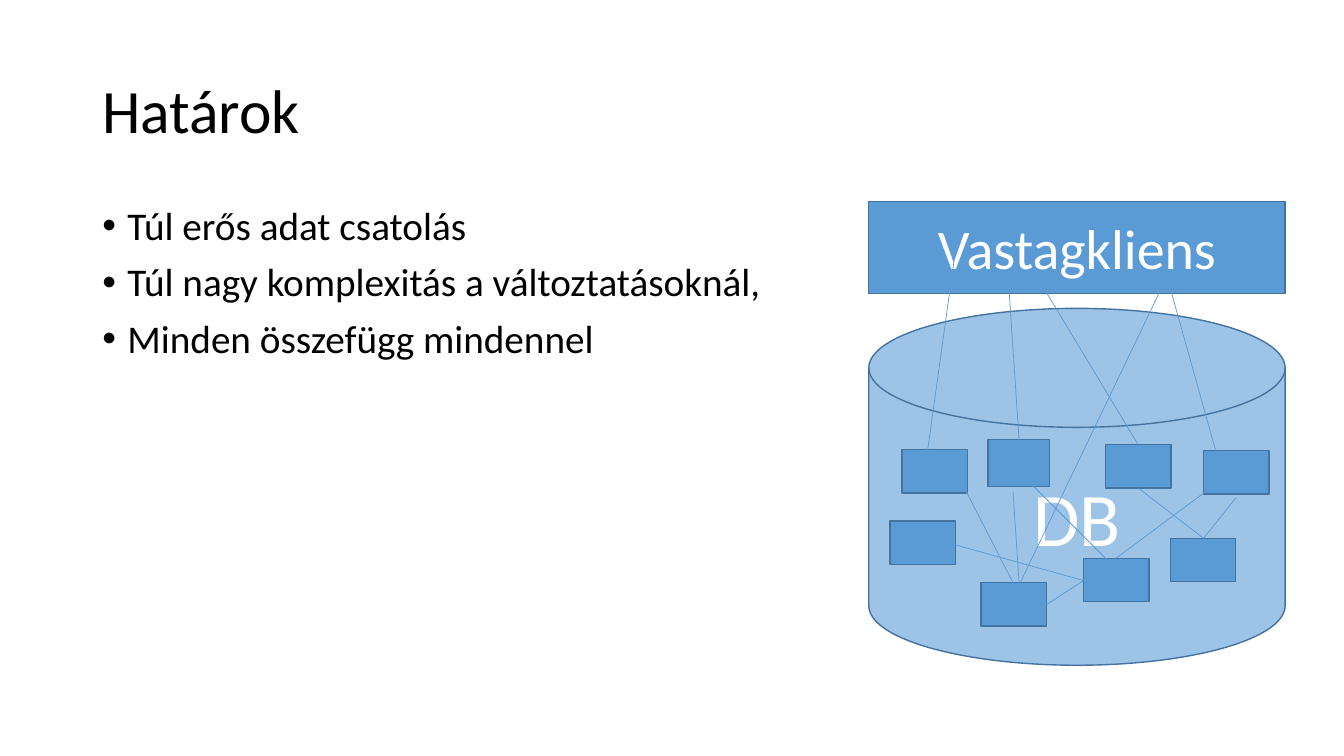
"""Build the slide on the limits of a thick client over a shared database."""
from lxml.etree import SubElement
from pptx import Presentation
from pptx.dml.color import RGBColor
from pptx.enum.shapes import MSO_CONNECTOR as Link, MSO_SHAPE as Kind
from pptx.enum.text import MSO_ANCHOR as Anchor, PP_ALIGN as Align
from pptx.oxml.ns import qn
from pptx.util import Pt

BLACK = RGBColor(0x00, 0x00, 0x00)
WHITE = RGBColor(0xFF, 0xFF, 0xFF)
BLUE = RGBColor(0x5B, 0x9B, 0xD5)
PALE = RGBColor(0x9D, 0xC3, 0xE6)
EDGE = RGBColor(0x43, 0x73, 0x9E)

TITLE = "Határok"
POINTS = [
    "Túl erős adat csatolás",
    "Túl nagy komplexitás a változtatásoknál,",
    "Minden összefügg mindennel",
]
BLOCKS = [
    (Kind.FLOWCHART_MAGNETIC_DISK, (620.6, 220.3, 297.4, 254.9), PALE, "DB", 54),
    (Kind.RECTANGLE, (620.6, 144, 297.4, 65.5), BLUE, "Vastagkliens", 40),
]
TABLE = (46.8, 31)
WIDE = (43.9, 33.8)
TABLES = [
    (644.4, 321.1, TABLE), (635.8, 372.2, TABLE), (774, 398.9, TABLE),
    (705.6, 313.9, WIDE), (789.8, 317.5, TABLE), (859.7, 321.8, TABLE),
    (835.9, 384.5, TABLE), (700.6, 416.2, TABLE),
]
LINKS = [
    (812.9, 348.5, 859.7, 384.5), (882.7, 355.7, 859.7, 384.5),
    (774, 414.7, 747.4, 432), (727.9, 337, 799.9, 409),
    (681.1, 388.8, 774, 414.7), (723.6, 351.4, 727.9, 415.4),
    (681.1, 333.4, 723.6, 416.2), (872.6, 342.7, 797, 398.9),
    (720.7, 205.9, 727.9, 313.9), (747.4, 208.8, 812.9, 317.5),
    (835.9, 205.9, 872.6, 337), (832.3, 200.2, 723.6, 427),
    (681.8, 183.6, 661, 333.4),
]


def style(item, **values):
    for name, value in values.items():
        setattr(item, name, value)


def write(part, text, size, color, **values):
    part.text = text
    style(part, **values)
    style(part.font, size=Pt(size), name="Calibri")
    part.font.color.rgb = color


def add_text(slide, area, lines, size, anchor, bullet=False):
    frame = slide.shapes.add_textbox(*map(Pt, area)).text_frame
    style(frame, word_wrap=True, vertical_anchor=anchor)
    for index, line in enumerate(lines):
        part = frame.add_paragraph() if index else frame.paragraphs[0]
        if bullet:
            props = part._p.get_or_add_pPr()
            props.set("marL", str(Pt(18)))
            props.set("indent", str(Pt(-18)))
            SubElement(props, qn("a:buFont"), typeface="Arial")
            SubElement(props, qn("a:buChar"), char="•")
        write(part, line, size, BLACK, line_spacing=0.9,
              space_before=Pt(10 if index else 0))


def add_block(slide, kind, area, fill, text="", size=18):
    block = slide.shapes.add_shape(kind, *map(Pt, area))
    block.shadow.inherit = False
    block.fill.solid()
    block.fill.fore_color.rgb = fill
    block.line.color.rgb = EDGE
    block.line.width = Pt(1)
    if text:
        block.text_frame.vertical_anchor = Anchor.MIDDLE
        write(block.text_frame.paragraphs[0], text, size, WHITE,
              alignment=Align.CENTER)


def add_link(slide, ends):
    link = slide.shapes.add_connector(Link.STRAIGHT, *map(Pt, ends))
    link.line.color.rgb = BLUE
    link.line.width = Pt(0.5)
    SubElement(link._element.spPr, qn("a:effectLst"))


def main():
    deck = Presentation()
    style(deck, slide_width=Pt(960), slide_height=Pt(540))
    slide = deck.slides.add_slide(deck.slide_layouts[6])
    add_text(slide, (66, 28.8, 828, 104.4), [TITLE], 44, Anchor.MIDDLE)
    add_text(slide, (66, 144, 828, 342.7), POINTS, 28, Anchor.TOP, True)
    for block in BLOCKS:
        add_block(slide, *block)
    for left, top, size in TABLES:
        add_block(slide, Kind.RECTANGLE, (left, top, *size), BLUE)
    for ends in LINKS:
        add_link(slide, ends)
    deck.save("out.pptx")


if __name__ == "__main__":
    main()
